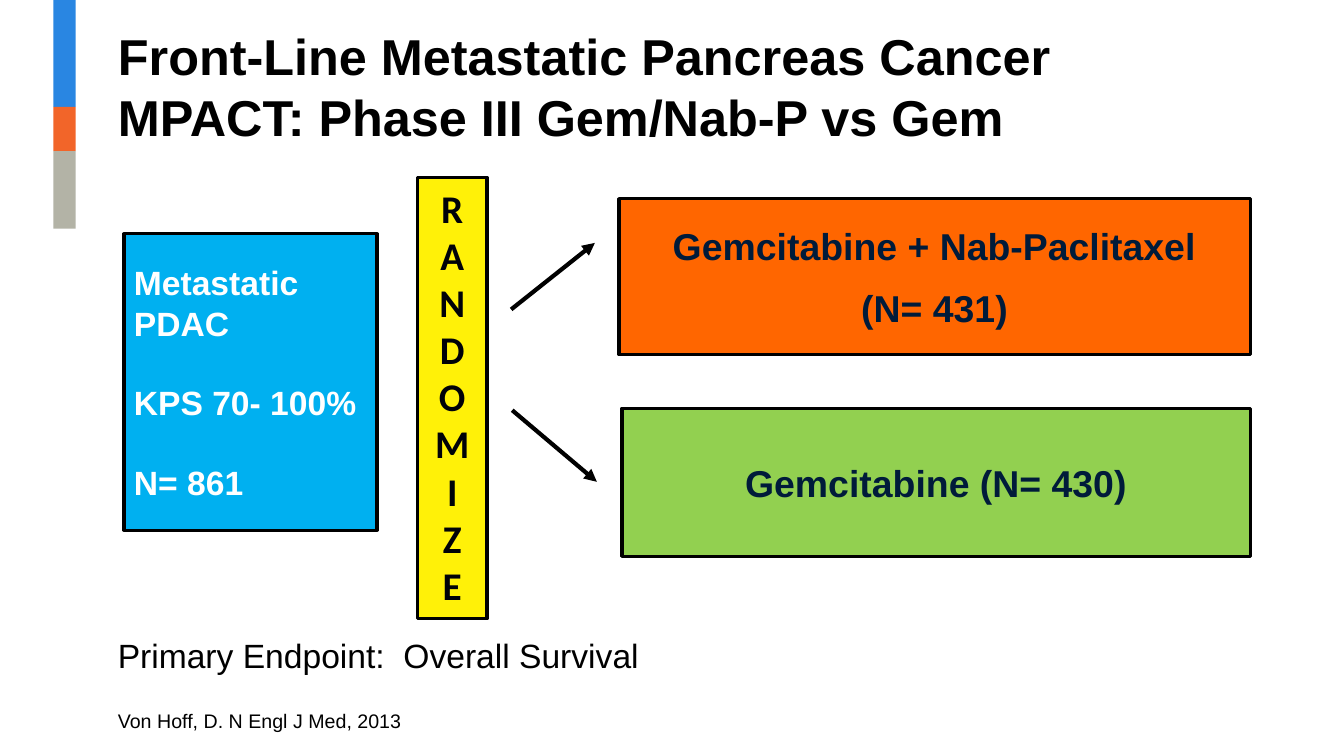
from dataclasses import dataclass

from pptx import Presentation
from pptx import util as u
from pptx.dml import color
from pptx.enum import shapes, text
from pptx.oxml import ns, xmlchemy


@dataclass(frozen=True)
class Theme:
    """Colours, fonts and type sizes of the slide."""
    bars: tuple = (("2986E2", 1.06), ("F26529", 0.44), ("B3B3A6", 0.77))
    black: str = "000000"
    white: str = "FFFFFF"
    navy: str = "001B3A"
    letter: str = "000208"
    blue: str = "00B0F0"
    orange: str = "FF6600"
    green: str = "92D050"
    yellow: str = "FFF108"
    body_font: str = "Arial"
    letter_font: str = "Calibri"
    title_size: float = 36
    letter_size: float = 28
    arm_size: float = 26.7
    body_size: float = 24
    citation_size: float = 14
    outline: float = 2.25
    arrow: float = 3


THEME = Theme()
ALIGN = text.PP_ALIGN
ANCHOR = text.MSO_ANCHOR


def rgb(value):
    """Turn a hex string into a colour."""
    return color.RGBColor.from_string(value)


def inches(box):
    """Convert a sequence of lengths to inches."""
    return [u.Inches(length) for length in box]


def write(shape, lines, size, ink, bold=False, font=THEME.body_font,
          align=ALIGN.LEFT, anchor=ANCHOR.TOP, gap=0, wrap=True):
    """Fill a shape with one paragraph per line, separated by gap points."""
    frame = shape.text_frame
    frame.auto_size = text.MSO_AUTO_SIZE.NONE
    frame.word_wrap = wrap
    frame.vertical_anchor = anchor
    for index, line in enumerate(lines):
        paragraph = frame.add_paragraph() if index else frame.paragraphs[0]
        paragraph.alignment = align
        paragraph.space_before = u.Pt(gap if index else 0)
        for part_index, part in enumerate(line.split("\n")):
            if part_index:
                paragraph.add_line_break()
            run = paragraph.add_run()
            run.text = part
            run.font.name = font
            run.font.size = u.Pt(size)
            run.font.bold = bold
            run.font.color.rgb = rgb(ink)


def add_block(slide, box, fill, outlined=True):
    """Draw a flat rectangle, with a black outline if asked."""
    shape = slide.shapes.add_shape(shapes.MSO_SHAPE.RECTANGLE, *inches(box))
    shape.shadow.inherit = False
    shape.fill.solid()
    shape.fill.fore_color.rgb = rgb(fill)
    if outlined:
        shape.line.color.rgb = rgb(THEME.black)
        shape.line.width = u.Pt(THEME.outline)
    else:
        shape.line.fill.background()
    return shape


def add_colour_bars(slide, left, top, width):
    """Stack the accent bars down from the given corner."""
    for fill, height in THEME.bars:
        add_block(slide, (left, top, width, height), fill, outlined=False)
        top += height


def add_title(slide, box, wording):
    """Place and format the title placeholder."""
    title = slide.shapes.title
    title.left, title.top, title.width, title.height = inches(box)
    write(title, [wording], THEME.title_size, THEME.black, bold=True,
          anchor=ANCHOR.BOTTOM)


def add_arrow(slide, start, end):
    """Draw a black arrow between two points."""
    arrow = slide.shapes.add_connector(
        shapes.MSO_CONNECTOR.STRAIGHT, *inches(start + end))
    arrow.line.color.rgb = rgb(THEME.black)
    arrow.line.width = u.Pt(THEME.arrow)
    head = xmlchemy.OxmlElement("a:tailEnd")
    head.set("type", "triangle")
    arrow.line._get_or_add_ln().append(head)
    properties = arrow._element.find(ns.qn("p:spPr"))
    properties.append(xmlchemy.OxmlElement("a:effectLst"))


def add_trial_diagram(slide, left, top):
    """Draw population, randomization and both arms from the given corner."""
    population = add_block(slide, (left, top + 0.56, 2.51, 2.94), THEME.blue)
    write(population, ["Metastatic PDAC", "KPS 70- 100%", "N= 861"],
          THEME.body_size, THEME.white, bold=True, anchor=ANCHOR.MIDDLE,
          gap=28)

    randomize = add_block(slide, (left + 2.91, top, 0.69, 4.38), THEME.yellow)
    frame = randomize.text_frame
    frame.margin_left = frame.margin_right = u.Inches(0.13)
    frame.margin_top = frame.margin_bottom = u.Inches(0.07)
    write(randomize, "RANDOMIZE", THEME.letter_size, THEME.letter, bold=True,
          font=THEME.letter_font, align=ALIGN.CENTER, wrap=False)

    arms = (
        ((4.91, 0.21, 6.26, 1.55), THEME.orange,
         ["Gemcitabine + Nab-Paclitaxel", "(N= 431)"],
         (3.84, 1.31), (4.67, 0.65)),
        ((4.94, 2.29, 6.23, 1.47), THEME.green,
         ["Gemcitabine (N= 430)"], (3.85, 2.31), (4.69, 3.02)),
    )
    for (x, y, width, height), fill, lines, start, end in arms:
        arm = add_block(slide, (left + x, top + y, width, height), fill)
        write(arm, lines, THEME.arm_size, THEME.navy, bold=True,
              align=ALIGN.CENTER, anchor=ANCHOR.MIDDLE, gap=12)
        add_arrow(slide, (left + start[0], top + start[1]),
                  (left + end[0], top + end[1]))


def add_note(slide, box, wording, size):
    """Add a plain line of text."""
    note = slide.shapes.add_textbox(*inches(box))
    write(note, [wording], size, THEME.black)


def add_trial_slide(presentation):
    """Build the trial design slide."""
    slide = presentation.slides.add_slide(presentation.slide_layouts[5])
    add_colour_bars(slide, 0.53, 0, 0.22)
    add_title(slide, (1.07, 0.46, 11.86, 1.04),
              "Front-Line Metastatic Pancreas Cancer\n"
              "MPACT: Phase III Gem/Nab-P vs Gem")
    add_trial_diagram(slide, 1.23, 1.76)
    add_note(slide, (1.07, 6.25, 9.63, 0.5),
             "Primary Endpoint:  Overall Survival", THEME.body_size)
    add_note(slide, (1.07, 6.98, 8.52, 0.5),
             "Von Hoff, D. N Engl J Med, 2013", THEME.citation_size)


def main():
    """Create and save the presentation."""
    presentation = Presentation()
    presentation.slide_width = u.Inches(13.33)
    presentation.slide_height = u.Inches(7.5)
    add_trial_slide(presentation)
    presentation.save("out.pptx")


if __name__ == "__main__":
    main()
